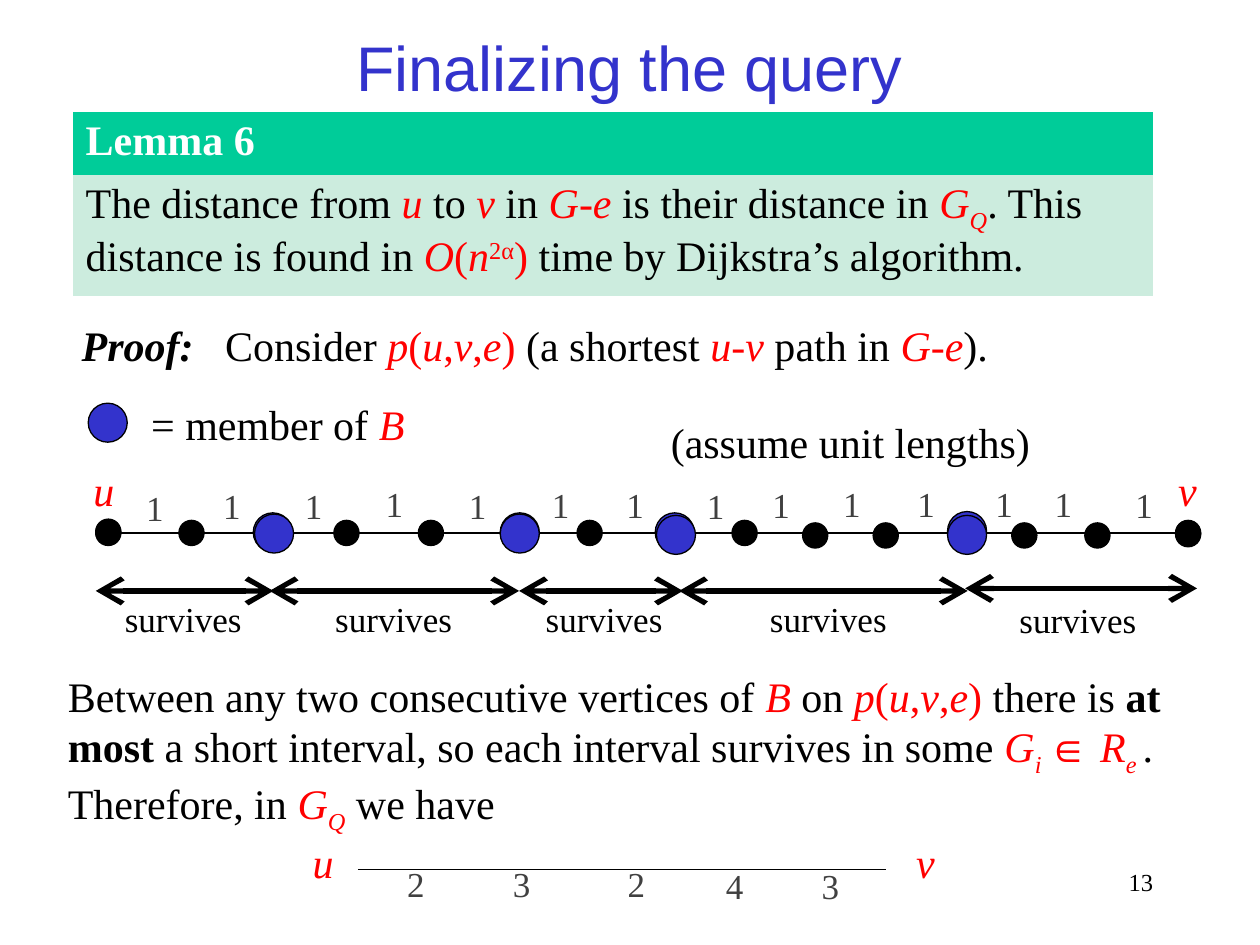
from pptx import Presentation
from pptx.dml.color import RGBColor
from pptx.enum.shapes import MSO_CONNECTOR, MSO_SHAPE
from pptx.enum.text import MSO_ANCHOR, PP_ALIGN
from pptx.oxml.ns import qn
from pptx.util import Inches, Pt
from lxml.etree import SubElement

THEME = {
    "head": "Arial", "text": "Times New Roman",
    "blue": "3333CC", "black": "000000", "red": "FF0000", "gray": "404040",
    "white": "FFFFFF", "green": "00CC99", "mint": "CCECDE",
    "title": 36, "body": 24, "label": 20, "page": 14,
}
STYLES = {
    "plain": ("black", {}),
    "bold": ("black", {"bold": True}),
    "proof": ("black", {"bold": True, "italic": True}),
    "lemma": ("white", {"bold": True}),
    "math": ("red", {"italic": True}),
    "red": ("red", {}),
    "sub": ("red", {"italic": True}),
    "sup": ("red", {}),
    "gray": ("gray", {}),
}
SHIFT = {"sub": "-25000", "sup": "30000"}
NOSTYLE = "{2D5ABB26-0587-4C30-8999-92F81FD0307C}"

TITLE = "Finalizing the query"
U, V, B = ("u", "math"), ("v", "math"), ("B", "math")
GE = [("G", "math"), ("-", "red"), ("e", "math")]
GQ = [("G", "math"), ("Q", "sub")]
PATH = [("p", "math"), ("(", "red"), U, (",", "red"), V, (",", "red"),
        ("e", "math"), (") ", "red")]
LEMMA = [
    ("green", 0.47, [("Lemma 6", "lemma")]),
    ("mint", 0.89, [
        ("The distance from ", "plain"), U, (" to ", "plain"), V, (" in ", "plain"), *GE,
        (" is their distance in ", "plain"), *GQ,
        (". This distance is found in ", "plain"), ("O", "math"), ("(", "red"),
        ("n", "math"), ("2α", "sup"), (")", "red"),
        (" time by Dijkstra’s algorithm.", "plain")]),
]
PROOF = [("Proof:", "proof"), ("   Consider ", "plain"), *PATH, ("(a shortest ", "plain"),
         U, ("-", "red"), V, (" path in ", "plain"), *GE, (").", "plain")]
CLAIM = [
    ("Between any two consecutive vertices of ", "plain"), B, (" on ", "plain"), *PATH,
    ("there is ", "plain"), ("at", "bold"), ("\n", "plain"), ("most ", "bold"),
    ("a short interval, so each interval survives in some ", "plain"),
    ("G", "math"), ("i ", "sub"), ("∈ ", "red"), ("R", "math"), ("e ", "sub"),
    (".", "plain"), ("\n", "plain"), ("Therefore, in ", "plain"), *GQ, (" we have", "plain"),
]
MEMBER = [("= member of ", "plain"), B]
ASSUME = [("(assume unit lengths)", "plain")]

DOT, HUB = 0.2, 0.31
NODES = [
    (0.76, 4.13, DOT), (1.42, 4.13, DOT), (2.01, 4.07, HUB), (2.65, 4.13, DOT),
    (3.32, 4.13, DOT), (3.97, 4.07, HUB), (4.58, 4.13, DOT), (5.2, 4.07, HUB),
    (5.81, 4.13, DOT), (6.37, 4.15, DOT), (6.93, 4.15, DOT), (7.52, 4.06, HUB),
    (8.03, 4.15, DOT), (8.61, 4.15, DOT), (9.33, 4.13, DOT),
]
KEY = (0.7, 3.2, HUB)
ENDS = [(0.76, 4.12, DOT), (2.02, 4.08, HUB), (3.97, 4.08, HUB), (5.21, 4.09, HUB),
        (7.52, 4.09, HUB), (9.33, 4.14, DOT)]
UNITS = [(1.06, 3.81), (1.67, 3.8), (2.32, 3.8), (2.96, 3.78), (3.62, 3.8),
         (4.28, 3.79), (4.87, 3.79), (5.51, 3.8), (6.03, 3.79), (6.59, 3.78),
         (7.18, 3.78), (7.8, 3.78), (8.27, 3.78), (8.91, 3.79)]
SPANS = [(0.76, 2.17, 4.69, 0.89, 4.69), (2.14, 4.12, 4.69, 2.56, 4.69),
         (4.12, 5.42, 4.69, 4.23, 4.69), (5.39, 7.68, 4.69, 6.01, 4.69),
         (7.66, 9.5, 4.67, 7.99, 4.7)]
WEIGHTS = [("2", 3.13, 6.8), ("3", 3.97, 6.8), ("2", 4.88, 6.8),
           ("4", 5.66, 6.81), ("3", 6.42, 6.81)]


def color(name):
    return RGBColor.from_string(THEME[name])


def write(frame, parts, size="body", align=PP_ALIGN.LEFT):
    para = frame.paragraphs[0]
    para.alignment = align
    for text, style in parts:
        if text == "\n":
            para.add_line_break()
            continue
        run = para.add_run()
        run.text = text
        tint, flags = STYLES[style]
        looks = {"name": THEME["text"], "size": Pt(THEME[size]), **flags}
        for key, value in looks.items():
            setattr(run.font, key, value)
        run.font.color.rgb = color(tint)
        if style in SHIFT:
            run.font._element.set("baseline", SHIFT[style])


def label(shapes, box, parts, size="body", align=PP_ALIGN.CENTER):
    frame = shapes.add_textbox(*map(Inches, box)).text_frame
    frame.word_wrap = False
    write(frame, parts, size, align)


def node(shapes, left, top, size):
    dot = shapes.add_shape(MSO_SHAPE.OVAL, *map(Inches, (left, top, size, size)))
    dot.shadow.inherit = False
    dot.fill.solid()
    dot.fill.fore_color.rgb = color("blue" if size == HUB else "black")
    dot.line.color.rgb = color("black")
    dot.line.width = Pt(0.75)


def rule(shapes, start, end, top, width=0.75, arrows=False):
    line = shapes.add_connector(MSO_CONNECTOR.STRAIGHT, *map(Inches, (start, top, end, top)))
    line.line.color.rgb = color("black")
    line.line.width = Pt(width)
    props = line._element.spPr
    if arrows:
        for tag in ("a:headEnd", "a:tailEnd"):
            SubElement(props.find(qn("a:ln")), qn(tag), type="arrow", w="lg", len="lg")
    SubElement(props, qn("a:effectLst"))


def lemma(shapes):
    total = sum(row[1] for row in LEMMA)
    table = shapes.add_table(len(LEMMA), 1, *map(Inches, (0.58, 0.89, 8.57, total))).table
    table._tbl.tblPr.find(qn("a:tableStyleId")).text = NOSTYLE
    for at, (fill, height, parts) in enumerate(LEMMA):
        table.rows[at].height = Inches(height)
        cell = table.cell(at, 0)
        cell.fill.solid()
        cell.fill.fore_color.rgb = color(fill)
        write(cell.text_frame, parts)


def heading(title):
    box = {"left": 0.49, "top": 0.16, "width": 9.01, "height": 0.73}
    for key, value in box.items():
        setattr(title, key, Inches(value))
    title.text_frame.text = TITLE
    title.text_frame.vertical_anchor = MSO_ANCHOR.MIDDLE
    para = title.text_frame.paragraphs[0]
    para.alignment = PP_ALIGN.CENTER
    for key, value in {"name": THEME["head"], "size": Pt(THEME["title"])}.items():
        setattr(para.runs[0].font, key, value)
    para.runs[0].font.color.rgb = color("blue")


def main():
    deck = Presentation()
    deck.slide_width, deck.slide_height = Inches(10), Inches(7.5)
    slide = deck.slides.add_slide(deck.slide_layouts[5])
    shapes = slide.shapes
    label(shapes, (7.17, 6.83, 2.08, 0.5), [("13", "plain")], "page", PP_ALIGN.RIGHT)
    heading(shapes.title)
    lemma(shapes)
    label(shapes, (0.55, 2.49, 7.48, 0.5), PROOF, align=PP_ALIGN.LEFT)

    for place in NODES:
        node(shapes, *place)
    rule(shapes, 0.76, 9.33, 4.23)
    label(shapes, (0.64, 3.64, 0.37, 0.5), [U])
    label(shapes, (9.25, 3.64, 0.35, 0.5), [V])
    node(shapes, *KEY)
    label(shapes, (1.09, 3.11, 2.23, 0.5), MEMBER)

    spans = shapes.add_group_shape().shapes
    for start, end, top, left, below in SPANS:
        rule(spans, start, end, top, 3, True)
        label(spans, (left, below, 1.13, 0.44), [("survives", "plain")], "label")
    for left, top in UNITS:
        label(shapes, (left, top, 0.34, 0.44), [("1", "gray")], "label")
    label(shapes, (5.21, 3.26, 3.08, 0.5), ASSUME)
    label(shapes, (0.44, 5.27, 8.95, 1.31), CLAIM, align=PP_ALIGN.LEFT)
    for place in ENDS:
        node(shapes, *place)

    short = shapes.add_group_shape().shapes
    rule(short, 2.84, 7.03, 6.9)
    label(short, (2.38, 6.59, 0.37, 0.5), [U])
    label(short, (7.17, 6.59, 0.35, 0.5), [V])
    for text, left, top in WEIGHTS:
        label(short, (left, top, 0.34, 0.44), [(text, "gray")], "label")
    deck.save("out.pptx")


if __name__ == "__main__":
    main()
